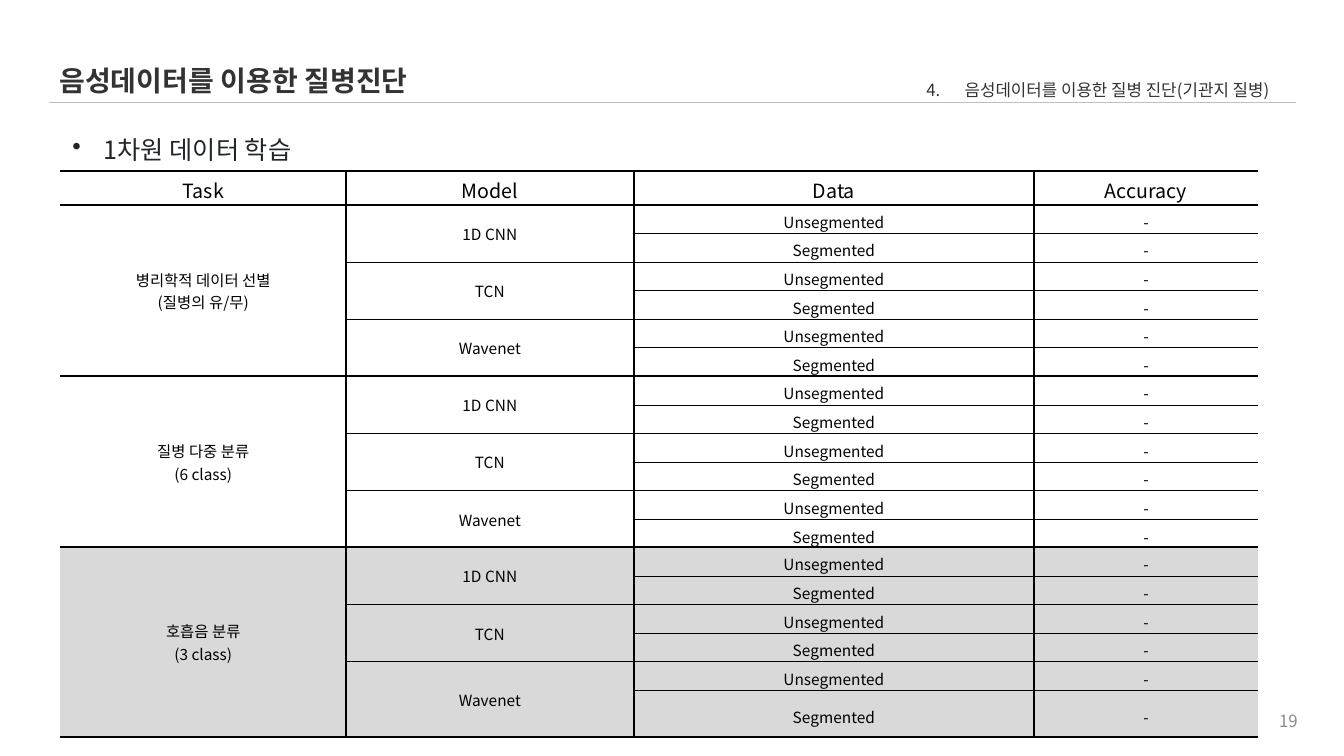
from lxml import etree
from pptx import Presentation
from pptx.dml.color import RGBColor
from pptx.enum.shapes import MSO_CONNECTOR
from pptx.enum.text import MSO_ANCHOR as ANCHOR, MSO_AUTO_SIZE as AUTOSIZE, PP_ALIGN as ALIGN
from pptx.oxml.ns import qn
from pptx.util import Inches, Pt

BLACK = RGBColor(0x00, 0x00, 0x00)
DARK = RGBColor(0x33, 0x33, 0x33)
INK = RGBColor(0x21, 0x25, 0x29)
GRAY = RGBColor(0x8C, 0x8C, 0x8C)
RULE = RGBColor(0xBF, 0xBF, 0xBF)
SHADE = RGBColor(0xD9, 0xD9, 0xD9)

FONT = "Noto Sans CJK KR"
THICK, THIN = 1.5, 0.5
HEADER = ["Task", "Model", "Data", "Accuracy"]
MODELS = ["1D CNN", "TCN", "Wavenet"]
DATA = ["Unsegmented", "Segmented"]
GROUP = len(MODELS) * len(DATA)
COLUMNS = [21.25, 21.4, 29.8, 16.65]
HEAD_ROW, BODY_ROW, LAST_ROW = 4.47, 3.79, 6.21


def sub(parent, tag, **attrs):
    return etree.SubElement(parent, qn(tag), attrs)


def write(tf, text, size=11, color=BLACK, bold=False, align=ALIGN.LEFT, spacing=None):
    for i, line in enumerate(text.split("\n")):
        p = tf.paragraphs[0] if i == 0 else tf.add_paragraph()
        p.alignment = align
        if spacing:
            p.line_spacing = spacing
        if line:
            r = p.add_run()
            r.text = line
            r.font.name, r.font.size, r.font.bold = FONT, Pt(size), bold
            r.font.color.rgb = color
            sub(r.font._element, "a:ea", typeface=FONT)
        sub(p._p, "a:endParaRPr", sz=str(size * 100))


def border(cell, side, width):
    ln = sub(cell._tc.get_or_add_tcPr(), f"a:ln{side}", w=str(Pt(width)))
    if width:
        sub(sub(ln, "a:solidFill"), "a:srgbClr", val=str(BLACK))
    else:
        sub(ln, "a:noFill")


class Deck:
    """Slide builder whose lengths are percentages of the slide's size."""

    def __init__(self):
        self.prs = Presentation()
        self.prs.slide_width, self.prs.slide_height = Inches(13.33), Inches(7.5)
        self.s = self.prs.slides.add_slide(self.prs.slide_layouts[6])

    def x(self, share):
        return round(self.prs.slide_width * share / 100)

    def y(self, share):
        return round(self.prs.slide_height * share / 100)

    def text(self, text, left, top, width, height, wrap=True, grow=True,
             anchor=ANCHOR.TOP, **style):
        sp = self.s.shapes.add_textbox(self.x(left), self.y(top), self.x(width), self.y(height))
        tf = sp.text_frame
        tf.word_wrap = wrap
        tf.auto_size = AUTOSIZE.SHAPE_TO_FIT_TEXT if grow else AUTOSIZE.NONE
        tf.vertical_anchor = anchor
        write(tf, text, **style)
        return tf.paragraphs[0]

    def bullet(self, p, indent, tag, **attrs):
        pPr = p._p.get_or_add_pPr()
        pPr.set("marL", str(self.x(indent)))
        pPr.set("indent", str(-self.x(indent)))
        sub(pPr, tag, **attrs)

    def line(self, left, right, top):
        cn = self.s.shapes.add_connector(
            MSO_CONNECTOR.STRAIGHT, self.x(left), self.y(top), self.x(right), self.y(top))
        cn.line.color.rgb, cn.line.width = RULE, Pt(THIN)
        sub(cn._element.spPr, "a:effectLst")

    def cell(self, table, row, col, text, size, thick_top, thick_bottom, fill):
        cell = table.cell(row, col)
        cell.vertical_anchor = ANCHOR.MIDDLE
        cell.margin_top = 0 if cell.is_merge_origin else Inches(0.05)
        cell.margin_bottom = 0
        write(cell.text_frame, text, size=size, align=ALIGN.CENTER)
        border(cell, "L", THICK if col else 0)
        border(cell, "R", THICK if col < len(COLUMNS) - 1 else 0)
        border(cell, "T", THICK if thick_top else THIN)
        border(cell, "B", THICK if thick_bottom else THIN)
        if fill is None:
            cell.fill.background()
        else:
            cell.fill.solid()
            cell.fill.fore_color.rgb = fill

    def table(self, left, top, tasks, heights, header=False, fill=None):
        table = self.s.shapes.add_table(
            len(heights), len(COLUMNS), self.x(left), self.y(top),
            self.x(sum(COLUMNS)), self.y(sum(heights))).table
        table.first_row = table.horz_banding = False
        for column, width in zip(table.columns, COLUMNS):
            column.width = self.x(width)
        for row, height in zip(table.rows, heights):
            row.height = self.y(height)
        if header:
            for col, label in enumerate(HEADER):
                self.cell(table, 0, col, label, 14, True, True, fill)
        pair = len(DATA)
        for t, task in enumerate(tasks):
            start = int(header) + t * GROUP
            table.cell(start, 0).merge(table.cell(start + GROUP - 1, 0))
            for m in range(len(MODELS)):
                row = start + m * pair
                table.cell(row, 1).merge(table.cell(row + pair - 1, 1))
            for i in range(GROUP):
                m, d = divmod(i, pair)
                first, last = i == 0, i == GROUP - 1
                model = MODELS[m] if d == 0 else ""
                model_end = m == len(MODELS) - 1
                self.cell(table, start + i, 0, task if first else "", 11, True, True, fill)
                self.cell(table, start + i, 1, model, 11, first, model_end, fill)
                self.cell(table, start + i, 2, DATA[d], 11, first, last, fill)
                self.cell(table, start + i, 3, "-", 11, first, last, fill)


def main():
    deck = Deck()
    deck.text("19", 74.79, 92.67, 22.51, 5.33, grow=False, anchor=ANCHOR.MIDDLE,
              size=12, color=GRAY, align=ALIGN.RIGHT)
    deck.line(3.68, 96.4, 13.6)
    deck.text("음성데이터를 이용한 질병진단", 3.68, 7.73, 30.08, 5.87, wrap=False,
              size=20, color=DARK, bold=True)
    section = deck.text("음성데이터를 이용한 질병 진단(기관지 질병)", 68.19, 8.53, 29.86, 4.8,
                        size=12, color=DARK, spacing=1.5)
    deck.bullet(section, 2.85, "a:buAutoNum", type="arabicPeriod", startAt="4")
    deck.table(4.5, 22.6, ["병리학적 데이터 선별\n(질병의 유/무)", "질병 다중 분류\n(6 class)"],
               [HEAD_ROW] + [BODY_ROW] * 2 * GROUP, header=True)
    topic = deck.text("1차원 데이터 학습", 4.65, 13.07, 50.04, 8.13,
                      size=18, color=INK, spacing=2.0)
    deck.bullet(topic, 2.33, "a:buChar", char="•")
    deck.table(4.5, 72.4, ["호흡음 분류\n(3 class)"],
               [BODY_ROW] * (GROUP - 1) + [LAST_ROW], fill=SHADE)
    deck.prs.save("out.pptx")


if __name__ == "__main__":
    main()
